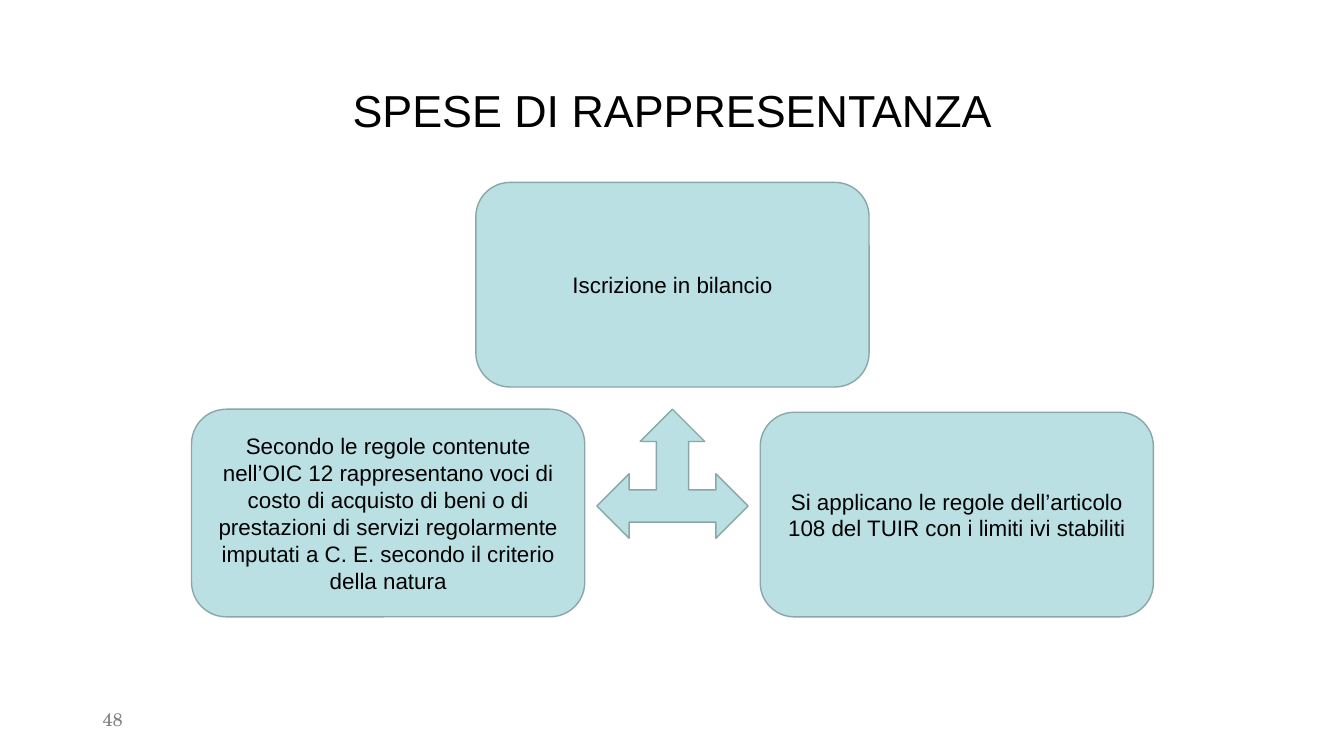
import pptx
import pptx.util
import pptx.dml.color
import pptx.enum.shapes
import pptx.enum.text

Inches, Pt = pptx.util.Inches, pptx.util.Pt
RGB = pptx.dml.color.RGBColor
MSO = pptx.enum.shapes.MSO_SHAPE
ALIGN = pptx.enum.text.PP_ALIGN

COLORS = {"text": "000000", "number": "808080", "fill": "BBE0E3", "line": "8AA6A8"}

prs = pptx.Presentation()
prs.slide_width, prs.slide_height = Inches(13.33), Inches(7.5)
s = prs.slides.add_slide(prs.slide_layouts[6])


def write(sp, text, size, font="Arial", color="text", align=ALIGN.CENTER, spacing=1.0):
    tf = sp.text_frame
    tf.word_wrap = True
    tf.vertical_anchor = pptx.enum.text.MSO_ANCHOR.MIDDLE
    p = tf.paragraphs[0]
    p.alignment, p.line_spacing = align, spacing
    r = p.add_run()
    r.text = text
    for name, value in {"size": Pt(size), "name": font}.items():
        setattr(r.font, name, value)
    r.font.color.rgb = RGB.from_string(COLORS[color])


def add_box(kind, left, top, width, height):
    sp = s.shapes.add_shape(kind, Inches(left), Inches(top), Inches(width), Inches(height))
    sp.shadow.inherit = False
    sp.fill.solid()
    sp.fill.fore_color.rgb = RGB.from_string(COLORS["fill"])
    sp.line.color.rgb = RGB.from_string(COLORS["line"])
    sp.line.width = Pt(1)
    return sp


# Title and slide number
title = s.shapes.add_textbox(Inches(0.92), Inches(0.4), Inches(11.5), Inches(1.45))
write(title, "SPESE DI RAPPRESENTANZA", 32, spacing=0.9)
number = s.shapes.add_textbox(Inches(0.92), Inches(6.95), Inches(3), Inches(0.4))
write(number, "48", 13, "TeX Gyre Schola", "number", ALIGN.LEFT, 0.93)

# Three-way arrow between the boxes
add_box(MSO.LEFT_RIGHT_UP_ARROW, 5.92, 4.06, 1.5, 1.28)

# Rounded boxes: left, top, height, text
boxes = [
    (4.72, 1.81, 2.03, "Iscrizione in bilancio"),
    (1.9, 4.06, 2.06, "Secondo le regole contenute nell’OIC 12 rappresentano voci di costo "
     "di acquisto di beni o di prestazioni di servizi regolarmente imputati a C. E. "
     "secondo il criterio della natura"),
    (7.54, 4.09, 2.03, "Si applicano le regole dell’articolo 108 del TUIR con i limiti ivi stabiliti"),
]
for left, top, height, text in boxes:
    write(add_box(MSO.ROUNDED_RECTANGLE, left, top, 3.9, height), text, 16)

prs.save("out.pptx")
